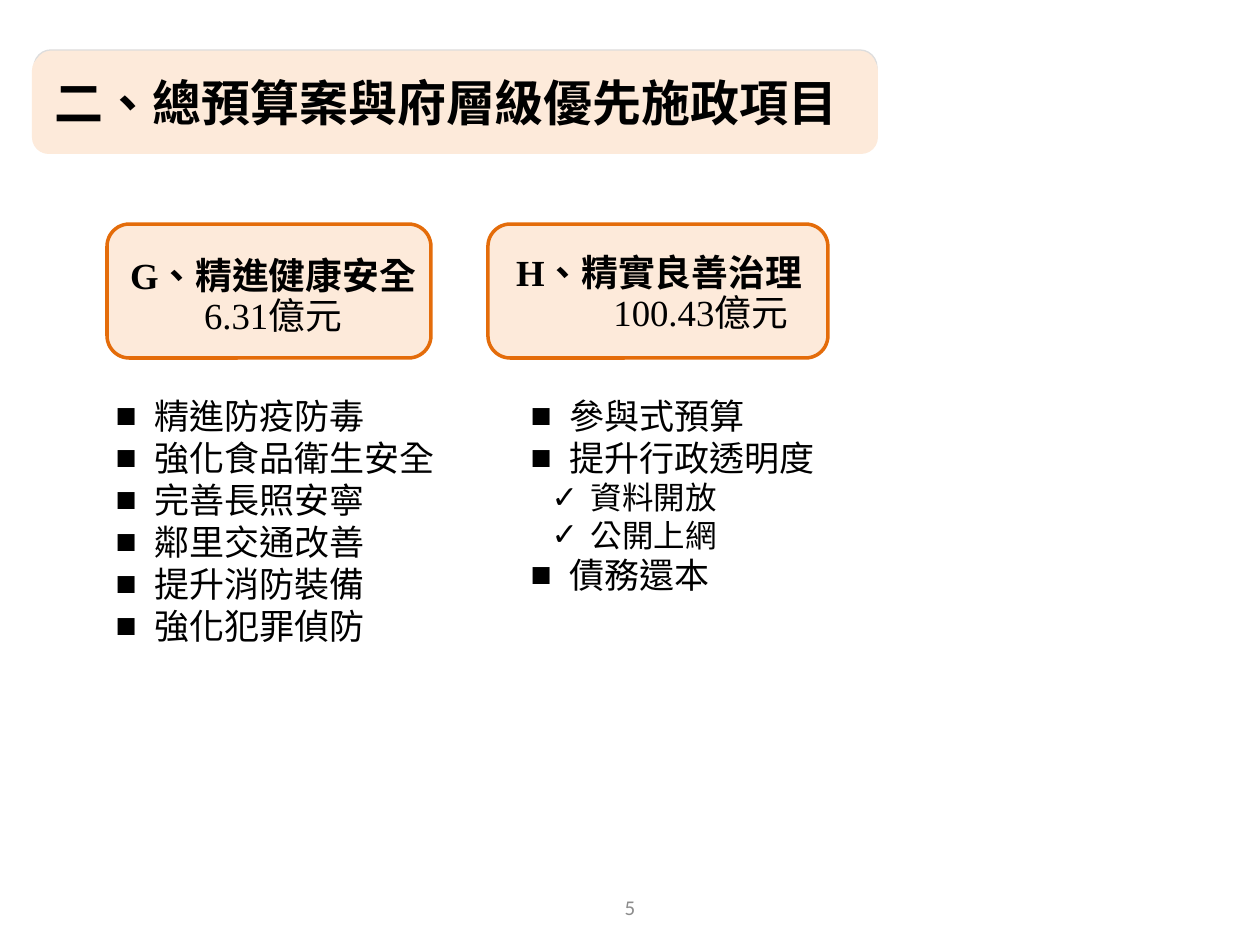
from lxml.etree import SubElement
from pptx import Presentation
from pptx.dml.color import RGBColor
from pptx.enum.shapes import MSO_SHAPE
from pptx.enum.text import MSO_ANCHOR, MSO_AUTO_SIZE, PP_ALIGN
from pptx.oxml.ns import qn
from pptx.util import Emu, Pt

PEACH = RGBColor(0xFD, 0xEA, 0xDA)
ORANGE = RGBColor(0xE4, 0x6C, 0x0A)
PALE_GRAY = RGBColor(0xDD, 0xDD, 0xDD)
GRAY = RGBColor(0x8C, 0x8C, 0x8C)
BLACK = RGBColor(0, 0, 0)
SERIF = "Times New Roman"
SANS = "Noto Sans CJK SC"


def px(length):
    return Emu(round(length * 914400 / 126))


class BudgetSlide:
    def __init__(self, presentation):
        self.slide = presentation.slides.add_slide(presentation.slide_layouts[3])
        self.shapes = self.slide.shapes

    def place(self, shape, box):
        shape.left, shape.top, shape.width, shape.height = map(px, box)

    def style(self, paragraph, size, font=SANS, color=BLACK, bold=False):
        paragraph.font.size = Pt(size)
        paragraph.font.bold = bold
        paragraph.font.color.rgb = color
        paragraph.font.name = font
        defaults = paragraph._p.pPr.find(qn("a:defRPr"))
        defaults.set("lang", "zh-TW")
        SubElement(defaults, qn("a:ea")).set("typeface", SANS)
        for run in paragraph.runs:
            run._r.get_or_add_rPr().set("lang", "zh-TW")

    def panel(self, shapes, box, line=None, width=0):
        panel = shapes.add_shape(MSO_SHAPE.ROUNDED_RECTANGLE, *map(px, box))
        panel.shadow.inherit = False
        panel.fill.solid()
        panel.fill.fore_color.rgb = PEACH
        if line is None:
            panel.line.fill.background()
        else:
            panel.line.color.rgb = line
            panel.line.width = Pt(width)

    def banner(self, text):
        group = self.shapes.add_group_shape()
        self.panel(group.shapes, (34, 50, 843, 102), PALE_GRAY, 0.75)
        self.panel(group.shapes, (32, 54, 846, 100))
        title = self.shapes.title
        self.place(title, (29, 66, 1008, 72))
        title.element.getparent().append(title.element)
        frame = title.text_frame
        frame.text = text
        frame.auto_size = MSO_AUTO_SIZE.NONE
        frame.vertical_anchor = MSO_ANCHOR.MIDDLE
        heading = frame.paragraphs[0]
        heading.alignment = PP_ALIGN.LEFT
        heading._p.get_or_add_pPr().set("indent", str(px(13)))
        self.style(heading, 28, SERIF, bold=True)

    def card(self, box, text_box, goal, amount, gap, new_line):
        group = self.shapes.add_group_shape()
        self.panel(group.shapes, box, ORANGE, 2)
        label = group.shapes.add_textbox(*map(px, text_box))
        frame = label.text_frame
        frame.word_wrap = True
        frame.vertical_anchor = MSO_ANCHOR.MIDDLE
        frame.margin_left = frame.margin_right = px(9)
        frame.margin_top = frame.margin_bottom = px(5)
        paragraph = frame.paragraphs[0]
        paragraph.alignment = PP_ALIGN.CENTER
        paragraph.line_spacing = 0.9
        paragraph.add_run().text = goal
        if new_line:
            paragraph.add_line_break()
        spacer = paragraph.add_run()
        spacer.text = " "
        spacer._r.get_or_add_rPr().set("spc", str(gap * 100))
        budget = paragraph.add_run()
        budget.text = amount
        budget.font.bold = False
        self.style(paragraph, 21, SERIF, bold=True)

    def checklist(self, index, box, items):
        body = self.slide.placeholders[index]
        self.place(body, box)
        frame = body.text_frame
        frame.word_wrap = True
        frame.auto_size = MSO_AUTO_SIZE.NONE
        frame.text = "\n".join(text for text, _ in items)
        for paragraph, (_, level) in zip(frame.paragraphs, items):
            paragraph.level = level
            paragraph.space_before = Pt(0)
            properties = paragraph._p.get_or_add_pPr()
            properties.set("marL", str(px((39, 60)[level])))
            properties.set("indent", str(px(-39)))
            SubElement(properties, qn("a:buChar")).set("char", "■✓"[level])
            self.style(paragraph, (20, 18)[level])

    def page_number(self, number):
        footer = self.shapes.add_textbox(*map(px, (488, 882, 284, 50)))
        frame = footer.text_frame
        frame.word_wrap = True
        frame.vertical_anchor = MSO_ANCHOR.MIDDLE
        frame.text = number
        frame.paragraphs[0].alignment = PP_ALIGN.CENTER
        self.style(frame.paragraphs[0], 12, "Calibri", GRAY)


def main():
    presentation = Presentation()
    presentation.slide_width, presentation.slide_height = px(1260), px(945)
    page = BudgetSlide(presentation)
    page.page_number("5")
    page.card((107, 224, 324, 134), (117, 237, 312, 121),
              "G、精進健康安全", "6.31億元", 25, False)
    page.card((488, 224, 340, 134), (494, 234, 330, 121),
              "H、精實良善治理", "100.43億元", 43, True)
    health = ("精進防疫防毒", "強化食品衛生安全", "完善長照安寧",
              "鄰里交通改善", "提升消防裝備", "強化犯罪偵防")
    page.checklist(1, (103, 388, 348, 310), [(item, 0) for item in health])
    page.checklist(2, (518, 388, 311, 258), [
        ("參與式預算", 0), ("提升行政透明度", 0),
        ("資料開放", 1), ("公開上網", 1), ("債務還本", 0)])
    page.banner("二、總預算案與府層級優先施政項目")
    presentation.save("out.pptx")


if __name__ == "__main__":
    main()
